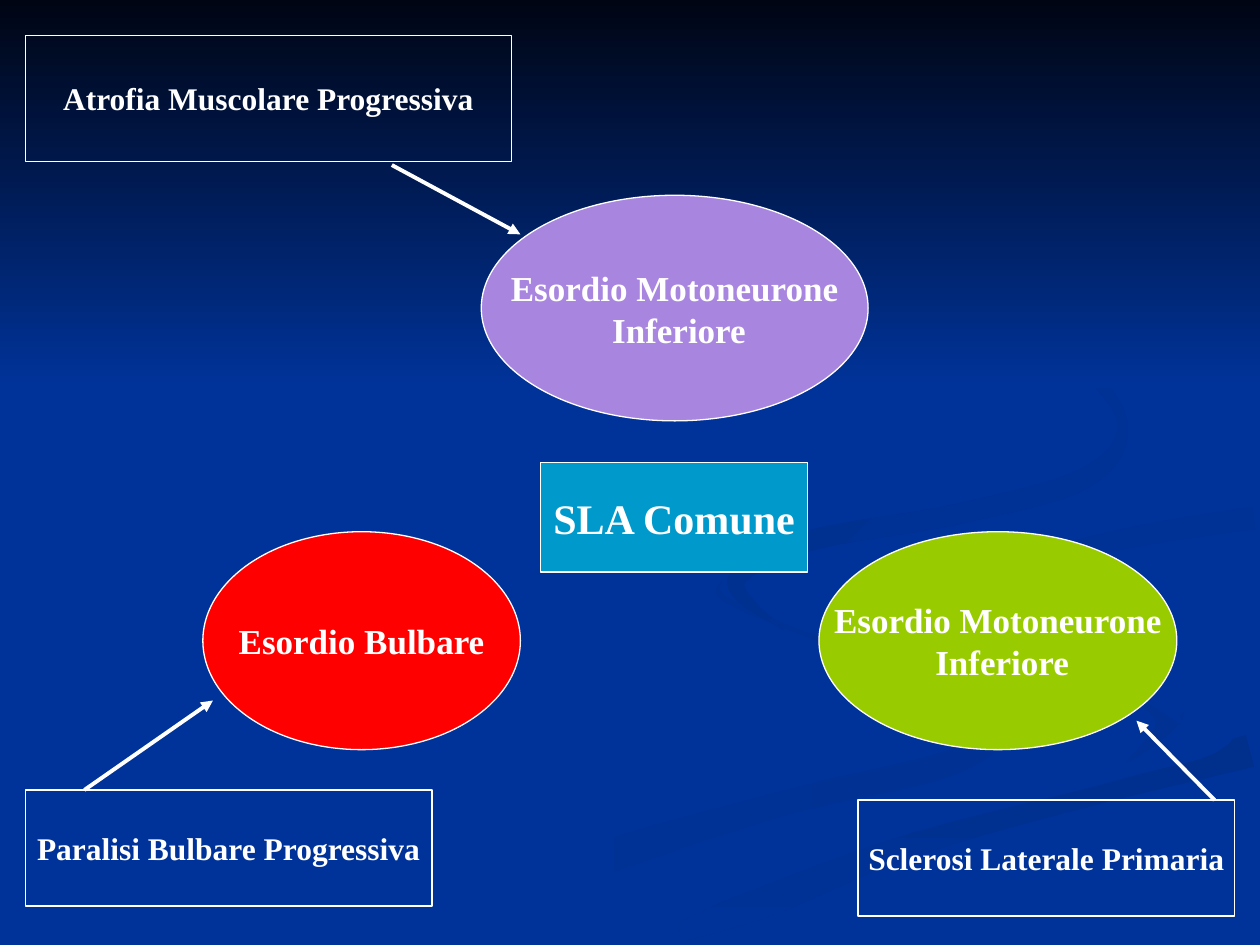
from dataclasses import dataclass
from math import hypot

from lxml import etree
from pptx import Presentation
from pptx.dml.color import RGBColor
from pptx.enum.shapes import MSO_CONNECTOR, MSO_SHAPE
from pptx.enum.text import MSO_ANCHOR, PP_ALIGN
from pptx.oxml.ns import qn
from pptx.util import Inches, Pt

FONT = "Times New Roman"
WHITE = RGBColor(0xFF, 0xFF, 0xFF)
BLUE = RGBColor(0x00, 0x33, 0x99)
NIGHT = RGBColor(0x00, 0x05, 0x14)
DARK = RGBColor(0x00, 0x2F, 0x8C)
SHADE = RGBColor(0x00, 0x30, 0x91)
SOFT = RGBColor(0x00, 0x31, 0x93)
PURPLE = RGBColor(0xA8, 0x86, 0xE0)
GREEN = RGBColor(0x99, 0xCC, 0x00)
RED = RGBColor(0xFF, 0x00, 0x00)
CYAN = RGBColor(0x00, 0x99, 0xCC)

ONSET_SIZE, CENTER_SIZE, VARIANT_SIZE = 20, 24, 18
LEFTWARD, DOWNWARD, DIAGONAL = 0, 270, 315
STEPS = 8


@dataclass
class Swirl:
    first: RGBColor
    last: RGBColor
    angle: int
    knots: list  # (x, y, ribbon width)


LOWER_RIBBON = Swirl(BLUE, SOFT, LEFTWARD, [
    (5.75, 4.59, 0), (5.78, 4.77, 0.05), (6.8, 5.19, 0.03),
    (7.8, 5.55, 0.03), (7.92, 5.8, 0.14), (7.5, 6.07, 0.2),
    (6.2, 6.38, 0.2), (4.6, 6.87, 0.28), (3.35, 7.35, 0.25)])
RIGHT_RIBBON = Swirl(BLUE, SOFT, DIAGONAL, [
    (7.24, 4.64, 0), (7.4, 4.88, 0.07), (8.1, 5.22, 0.1),
    (8.98, 5.47, 0.13), (9.3, 5.75, 0.25), (8.94, 6.05, 0)])
FLOOR_SWEEP = Swirl(DARK, BLUE, DOWNWARD, [
    (9.92, 5.96, 0.26), (8.6, 6.31, 0.2), (7.2, 6.71, 0.2),
    (6.1, 7.14, 0.25), (5.4, 7.4, 0.15)])
MAIN_WAVE = Swirl(BLUE, BLUE, LEFTWARD, [
    (9.95, 3.95, 0.15), (8.5, 4.19, 0.15), (7.55, 4.6, 0.5),
    (8.5, 5.15, 0.2), (9.6, 5.65, 0.5), (8.9, 6.13, 0.1),
    (7, 6.63, 0.1), (4.95, 7.4, 0.12)])
INNER_CURL = Swirl(SHADE, BLUE, DIAGONAL, [
    (8.26, 4.96, 0), (7.94, 4.72, 0.16), (8.28, 4.45, 0.14),
    (9, 4.26, 0.16), (9.95, 4.11, 0.18)])
UPPER_CURL = Swirl(DARK, BLUE, DIAGONAL, [
    (7.62, 2.33, 0), (8.55, 2.89, 0.08), (8.91, 3.38, 0.08),
    (8.6, 3.8, 0.16), (7.6, 4.08, 0.16), (6.4, 4.3, 0.16),
    (5.84, 4.62, 0.14), (6.22, 5, 0)])
SWIRLS = [LOWER_RIBBON, RIGHT_RIBBON, FLOOR_SWEEP, MAIN_WAVE, INNER_CURL, UPPER_CURL]

ONSETS = [
    ("Esordio Motoneurone\n Inferiore", (3.82, 1.55, 3.07, 1.79), PURPLE),
    ("Esordio Motoneurone\n Inferiore", (6.5, 4.22, 2.84, 1.73), GREEN),
    ("Esordio Bulbare", (1.61, 4.22, 2.52, 1.73), RED),
]
VARIANTS = [
    ("Paralisi Bulbare Progressiva", (0.2, 6.27, 3.23, 0.92), (0.67, 6.27, 1.69, 5.56)),
    ("Sclerosi Laterale Primaria", (6.81, 6.35, 2.99, 0.92), (9.64, 6.35, 9.02, 5.72)),
    ("Atrofia Muscolare Progressiva", (0.2, 0.28, 3.86, 1), (3.11, 1.31, 4.13, 1.86)),
]


def catmull_rom(a, b, c, d, t):
    return b + t * (c - a + t * (2 * a - 5 * b + 4 * c - d + t * (3 * (b - c) + d - a))) / 2


def smooth(knots):
    padded = [knots[0], *knots, knots[-1]]
    curve = []
    for quad in zip(padded, padded[1:], padded[2:], padded[3:]):
        for step in range(STEPS):
            curve.append(tuple(catmull_rom(*axis, step / STEPS) for axis in zip(*quad)))
    return curve + [knots[-1]]


def ribbon_outline(knots):
    curve = smooth(knots)
    one_side, other_side = [], []
    for before, (x, y, width), after in zip([curve[0], *curve], curve, [*curve[1:], curve[-1]]):
        dx, dy = after[0] - before[0], after[1] - before[1]
        reach = max(width, 0) / 2 / hypot(dx, dy)
        one_side.append((x - dy * reach, y + dx * reach))
        other_side.append((x + dy * reach, y - dx * reach))
    return one_side + other_side[::-1]


def fill_solid(fill, color):
    fill.solid()
    fill.fore_color.rgb = color


def fill_gradient(sp, first, last, angle):
    sp.shadow.inherit = False
    sp.line.fill.background()
    sp.fill.gradient()
    sp.fill.gradient_angle = angle
    for stop, color in zip(sp.fill.gradient_stops, (first, last)):
        stop.color.rgb = color


def add_swirl(s, swirl):
    start, *rest = [(Inches(x), Inches(y)) for x, y in ribbon_outline(swirl.knots)]
    builder = s.shapes.build_freeform(*start)
    builder.add_line_segments(rest, close=True)
    fill_gradient(builder.convert_to_shape(), swirl.first, swirl.last, swirl.angle)


def add_background(prs, s):
    fill_solid(s.background.fill, BLUE)
    for swirl in SWIRLS:
        add_swirl(s, swirl)
    sky = s.shapes.add_shape(MSO_SHAPE.RECTANGLE, 0, 0, prs.slide_width, Inches(3.08))
    fill_gradient(sky, NIGHT, BLUE, DOWNWARD)


def add_label(s, kind, text, box, size, color=None):
    sp = s.shapes.add_shape(kind, *map(Inches, box))
    sp.shadow.inherit = False
    if color is None:
        sp.fill.background()
    else:
        fill_solid(sp.fill, color)
    sp.line.color.rgb = WHITE
    sp.line.width = Pt(0.75)
    tf = sp.text_frame
    tf.text = text
    tf.word_wrap = False
    tf.vertical_anchor = MSO_ANCHOR.MIDDLE
    for p in tf.paragraphs:
        p.alignment = PP_ALIGN.CENTER
        for r in p.runs:
            r.font.name = FONT
            r.font.size = Pt(size)
            r.font.bold = True
            r.font.color.rgb = WHITE


def add_arrow(s, ends):
    cn = s.shapes.add_connector(MSO_CONNECTOR.STRAIGHT, *map(Inches, ends))
    fill_solid(cn.line.fill, WHITE)
    cn.line.width = Pt(2.25)
    sp_pr = cn._element.spPr
    etree.SubElement(sp_pr.find(qn("a:ln")), qn("a:tailEnd"), type="triangle")
    etree.SubElement(sp_pr, qn("a:effectLst"))


def main():
    prs = Presentation()
    prs.slide_width, prs.slide_height = Inches(10), Inches(7.5)
    s = prs.slides.add_slide(prs.slide_layouts[6])
    add_background(prs, s)

    for text, box, color in ONSETS:
        add_label(s, MSO_SHAPE.OVAL, text, box, ONSET_SIZE, color)
    add_label(s, MSO_SHAPE.RECTANGLE, "SLA Comune", (4.29, 3.67, 2.12, 0.87), CENTER_SIZE, CYAN)
    for text, box, arrow in VARIANTS:
        add_label(s, MSO_SHAPE.RECTANGLE, text, box, VARIANT_SIZE)
        add_arrow(s, arrow)

    prs.save("out.pptx")


if __name__ == "__main__":
    main()
